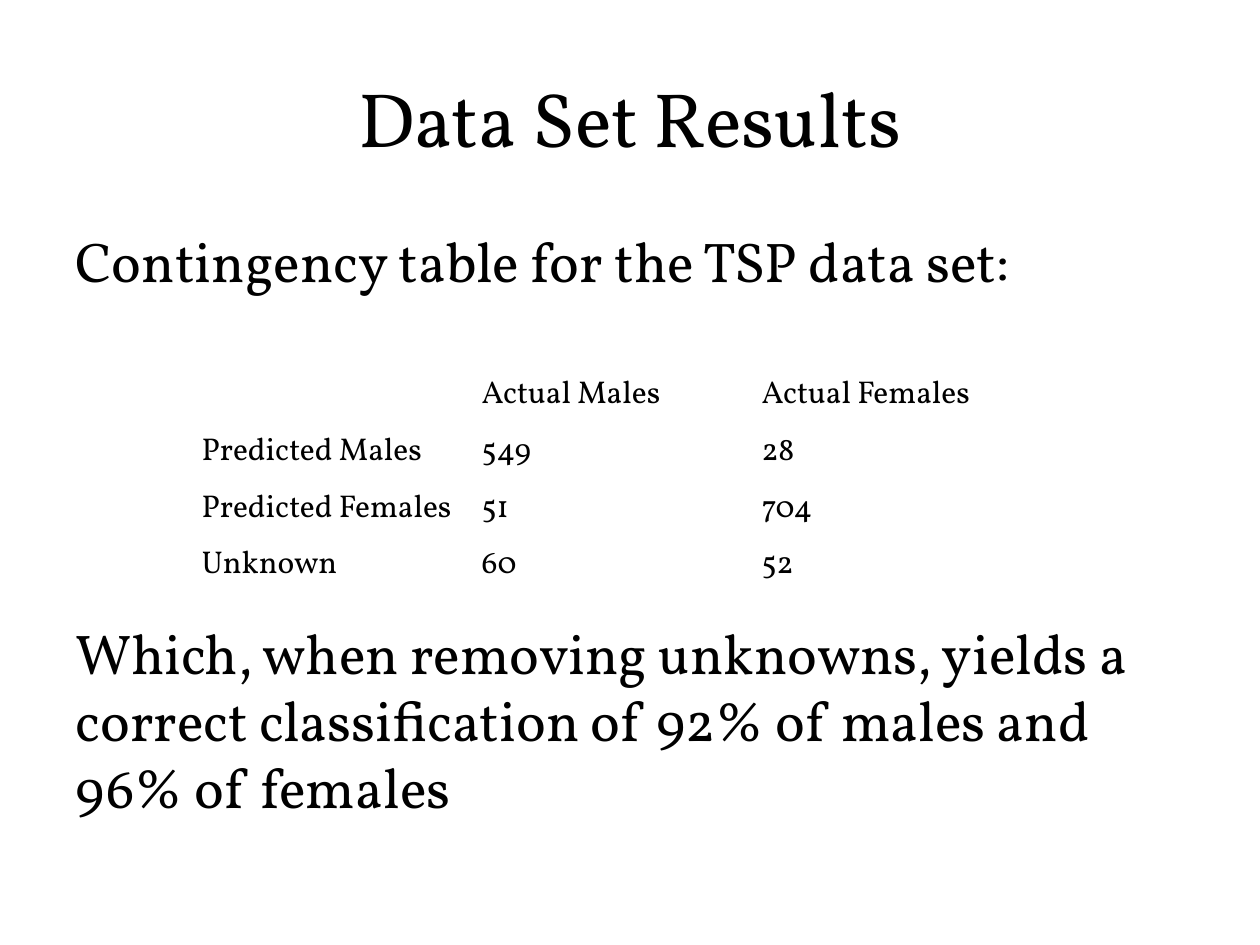
import pptx
import pptx.util
import pptx.dml.color
import pptx.enum.text

Pt = pptx.util.Pt
BLACK = pptx.dml.color.RGBColor(0, 0, 0)
ALIGN = pptx.enum.text.PP_ALIGN
ANCHOR = pptx.enum.text.MSO_ANCHOR
FACE = "Vollkorn"

TITLE = "Data Set Results"
BODY = [
    "Contingency table for the TSP data set:",
    "Which, when removing unknowns, yields a correct classification "
    "of 92% of males and 96% of females",
]
ROWS = [
    ("", "Actual Males", "Actual Females"),
    ("Predicted Males", "549", "28"),
    ("Predicted Females", "51", "704"),
    ("Unknown", "60", "52"),
]
COL, ROW = 160, 32.4
GAP = 185.5  # room for the table between the two body paragraphs


def style(para, size):
    look = {"name": FACE, "size": Pt(size)}
    for key, value in look.items():
        setattr(para.font, key, value)
    para.font.color.rgb = BLACK


def add_text(slide, box, lines, size, align, anchor, gap=0):
    frame = slide.shapes.add_textbox(*map(Pt, box)).text_frame
    frame.word_wrap = True
    frame.vertical_anchor = anchor
    frame.text = "\n".join(lines)
    for i, para in enumerate(frame.paragraphs):
        style(para, size)
        para.alignment = align
        para.space_before = Pt(gap if i else 0)


def add_grid(slide, left, top):
    high, wide = len(ROWS), len(ROWS[0])
    frame = slide.shapes.add_table(
        high, wide, Pt(left), Pt(top), Pt(COL * wide), Pt(ROW * high))
    table = frame.table
    table.first_row = table.horz_banding = False
    for col in table.columns:
        col.width = Pt(COL)
    for row, words in zip(table.rows, ROWS):
        row.height = Pt(ROW)
        for cell, word in zip(row.cells, words):
            cell.fill.background()
            cell.text = word
            style(cell.text_frame.paragraphs[0], 18)


def main():
    deck = pptx.Presentation()
    deck.slide_width, deck.slide_height = Pt(720), Pt(540)
    slide = deck.slides.add_slide(deck.slide_layouts[6])
    add_text(slide, (36, 21.6, 648, 90), [TITLE], 44,
             ALIGN.CENTER, ANCHOR.MIDDLE)
    add_text(slide, (36, 126, 648, 356.4), BODY, 32,
             ALIGN.LEFT, ANCHOR.TOP, GAP)
    add_grid(slide, 108, 210)
    deck.save("out.pptx")


if __name__ == "__main__":
    main()
